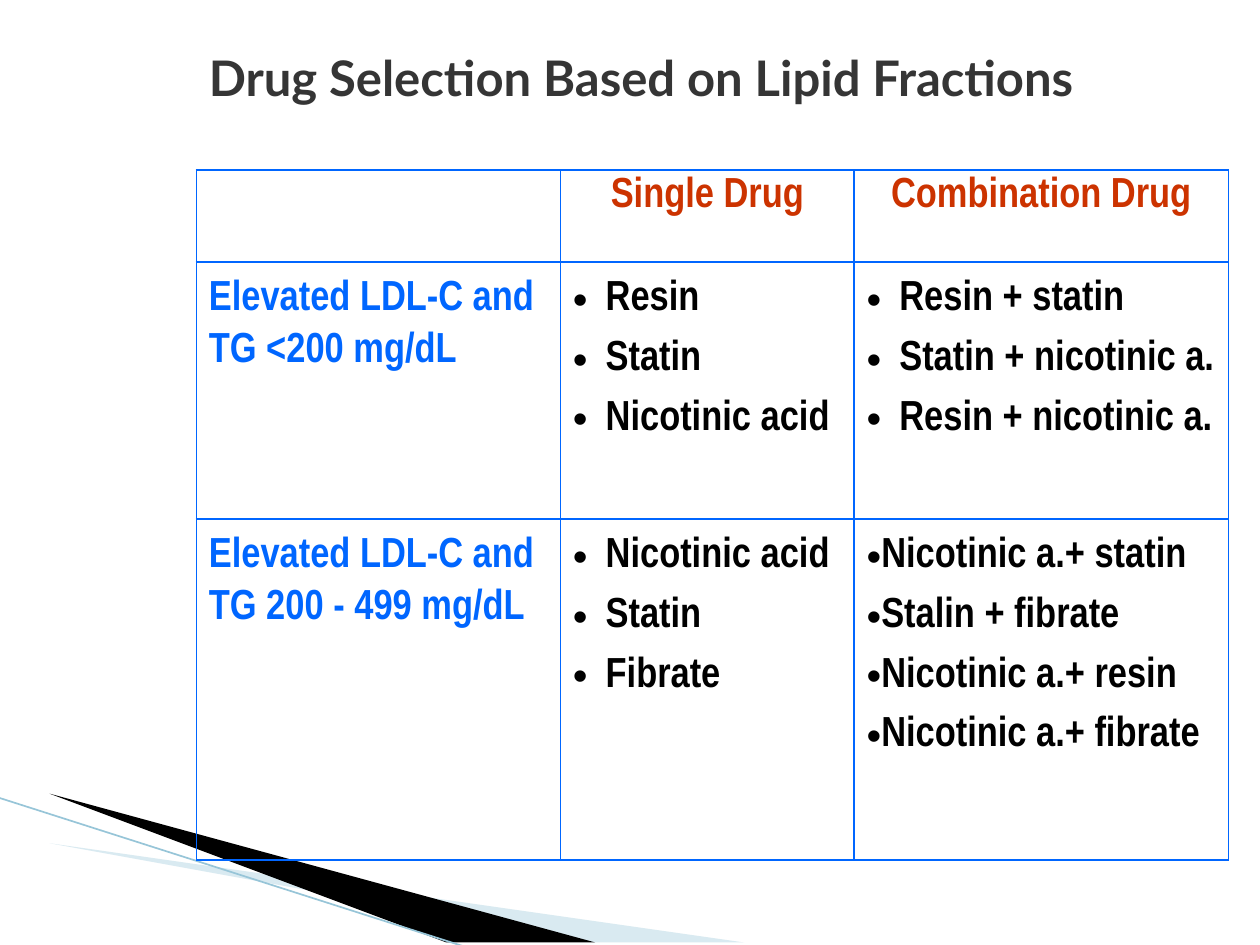
from lxml.etree import SubElement
from pptx import Presentation
from pptx.dml.color import RGBColor as RGB
from pptx.enum.shapes import MSO_CONNECTOR as CONN
from pptx.enum.text import MSO_ANCHOR, PP_ALIGN
from pptx.oxml.ns import qn
from pptx.util import Cm, Pt

COLORS = {"title": "353535", "header": "CC3300", "label": "0066FF", "item": "000000",
          "border": "0066FF", "pale": "A0CBDC", "dark": "000000", "edge": "97C5D8"}


def add_text(p, text, font, size, color):
    r = p.add_run()
    r.text = text
    r.font.name, r.font.size, r.font.bold = font, Pt(size), True
    r.font.color.rgb = RGB.from_string(COLORS[color])


def add_borders(cell):
    tcPr = cell._tc.get_or_add_tcPr()
    for i, side in enumerate(("lnL", "lnR", "lnT", "lnB")):
        ln = tcPr.makeelement(qn(f"a:{side}"), {"w": str(Pt(1))})
        fill = SubElement(ln, qn("a:solidFill"))
        SubElement(fill, qn("a:srgbClr"), val=COLORS["border"])
        tcPr.insert(i, ln)


prs = Presentation()
prs.slide_width, prs.slide_height = Cm(25.4), Cm(19.05)
s = prs.slides.add_slide(prs.slide_layouts[6])

wedges = [("pale", 40, [(1.4, 16.54), (15.11, 19.08), (11.58, 19.08)]),
          ("dark", 100, [(1.35, 16.48), (11.61, 19.08), (9.45, 19.1)])]
for color, alpha, points in wedges:
    builder = s.shapes.build_freeform(*points[0], scale=Cm(1))
    builder.add_line_segments(points[1:], close=True)
    sp = builder.convert_to_shape()
    sp.shadow.inherit = False
    sp.fill.solid()
    sp.fill.fore_color.rgb = RGB.from_string(COLORS[color])
    sp.line.fill.background()
    if alpha < 100:
        clr = sp._element.spPr.find(qn("a:solidFill"))[0]
        SubElement(clr, qn("a:alpha"), val=str(alpha * 1000))

edge = s.shapes.add_connector(CONN.STRAIGHT, Cm(-0.03), Cm(16.08), Cm(9.42), Cm(19.1))
edge.line.color.rgb = RGB.from_string(COLORS["edge"])
edge.line.width = Pt(0.95)
SubElement(edge._element.spPr, qn("a:effectLst"))

widths = [7.34, 5.92, 7.54]
heights = [1.85, 5.18, 6.88]
indents = [[0, 0, 0], [0, 0.66, 0.66], [0, 0.66, 0.28]]
rows = [
    [[], ["Single Drug"], ["Combination Drug"]],
    [["Elevated LDL-C and TG <200 mg/dL"],
     ["Resin", "Statin", "Nicotinic acid"],
     ["Resin + statin", "Statin + nicotinic a.", "Resin + nicotinic a."]],
    [["Elevated LDL-C and TG 200 - 499 mg/dL"],
     ["Nicotinic acid", "Statin", "Fibrate"],
     ["Nicotinic a.+ statin", "Stalin + fibrate", "Nicotinic a.+ resin", "Nicotinic a.+ fibrate"]],
]
table = s.shapes.add_table(3, 3, Cm(3.96), Cm(3.43), Cm(sum(widths)), Cm(sum(heights))).table
table.first_row = table.horz_banding = False
for col, width in zip(table.columns, widths):
    col.width = Cm(width)
for row, height in zip(table.rows, heights):
    row.height = Cm(height)

for i, row in enumerate(rows):
    for j, lines in enumerate(row):
        cell = table.cell(i, j)
        cell.fill.background()
        add_borders(cell)
        cell.margin_left = cell.margin_right = Cm(0.25)
        cell.margin_top = cell.margin_bottom = Cm(0.13)
        color = "header" if i == 0 else "label" if j == 0 else "item"
        tf = cell.text_frame
        for k, line in enumerate(lines):
            p = tf.add_paragraph() if k else tf.paragraphs[0]
            if i == 0:
                p.alignment = PP_ALIGN.CENTER
            else:
                p.line_spacing = 1.3
            if k:
                p.space_before = Pt(4.8)
            if color == "item":
                pPr = p._p.get_or_add_pPr()
                pPr.set("marL", str(Cm(indents[i][j])))
                pPr.set("indent", str(-Cm(indents[i][j])))
                SubElement(pPr, qn("a:buFont"), typeface="Arial")
                SubElement(pPr, qn("a:buChar"), char="•")
            add_text(p, line, "Arial Narrow", 24, color)

title = s.shapes.add_textbox(Cm(3.96), Cm(0.84), Cm(20.17), Cm(1.45))
tf = title.text_frame
tf.word_wrap = False
tf.vertical_anchor = MSO_ANCHOR.TOP
add_text(tf.paragraphs[0], "Drug Selection Based on Lipid Fractions", "Lato", 28, "title")

prs.save("out.pptx")
